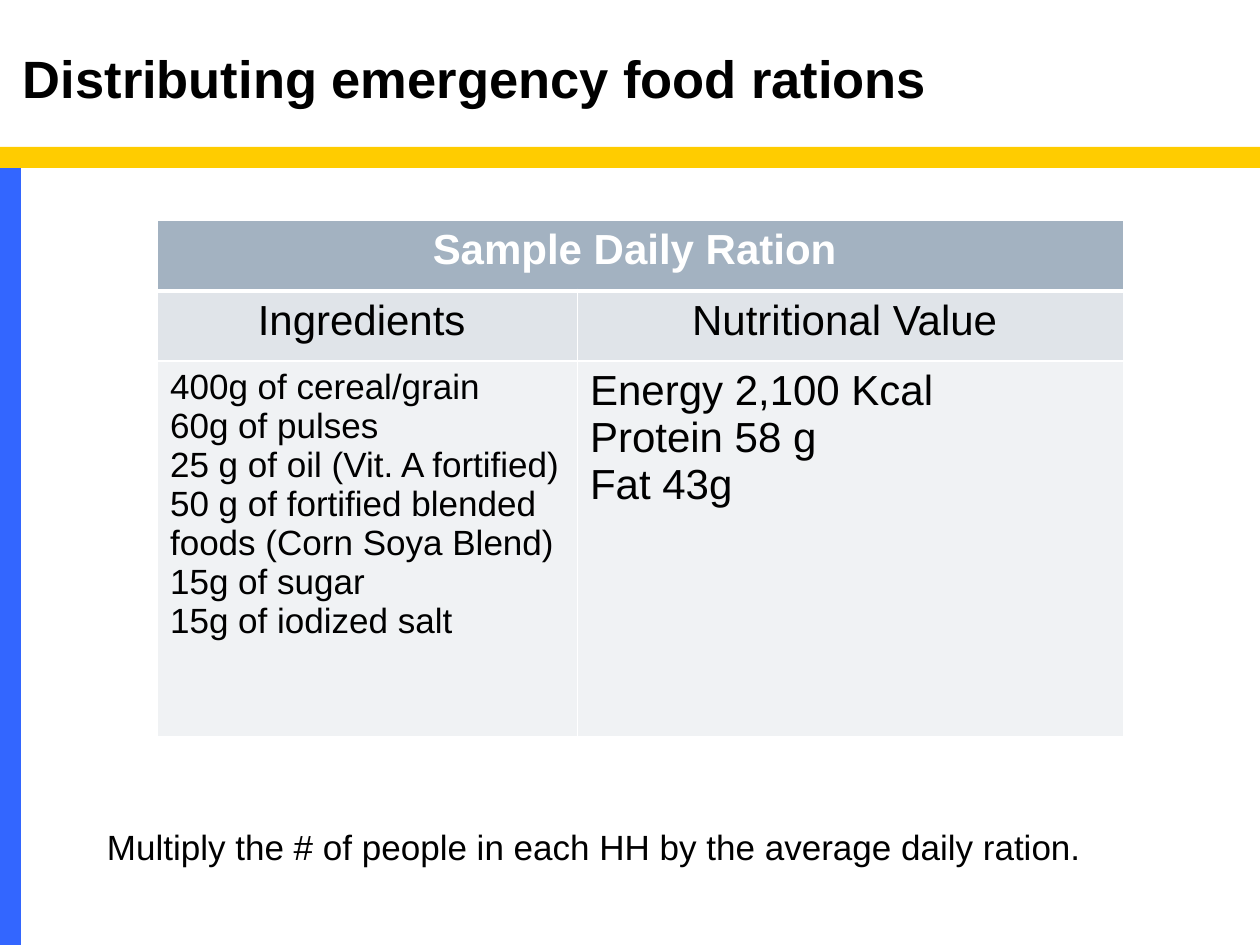
from lxml import etree
from pptx import Presentation
from pptx.dml.color import RGBColor
from pptx.enum.shapes import MSO_SHAPE
from pptx.enum.text import MSO_ANCHOR, PP_ALIGN
from pptx.oxml import parse_xml
from pptx.oxml.ns import nsdecls
from pptx.util import Pt

PX = 7620
BLACK = RGBColor(0x00, 0x00, 0x00)
WHITE = RGBColor(0xFF, 0xFF, 0xFF)
YELLOW = RGBColor(0xFF, 0xCC, 0x00)
BLUE = RGBColor(0x33, 0x66, 0xFF)
HEADER = RGBColor(0xA3, 0xB2, 0xC1)
SUBHEADER = RGBColor(0xE0, 0xE4, 0xE9)
BODY = RGBColor(0xF0, 0xF2, 0xF4)


def write(tf, text, size, color=BLACK, bold=False, align=PP_ALIGN.LEFT):
    p = tf.paragraphs[0]
    p.text = text
    p.alignment = align
    for r in p.runs:
        font = {"name": "Arial", "size": Pt(size), "bold": bold}
        for key, value in font.items():
            setattr(r.font, key, value)
        r.font.color.rgb = color


def border(cell, side, width):
    cell._tc.get_or_add_tcPr().append(parse_xml(
        f'<a:ln{side} {nsdecls("a")} w="{Pt(width)}"><a:solidFill>'
        f'<a:srgbClr val="{WHITE}"/></a:solidFill></a:ln{side}>'))


prs = Presentation()
prs.slide_width, prs.slide_height = 1200 * PX, 900 * PX
s = prs.slides.add_slide(prs.slide_layouts[6])

for box, color in [((0, 140, 1200, 20), YELLOW), ((0, 160, 20, 740), BLUE)]:
    sp = s.shapes.add_shape(MSO_SHAPE.RECTANGLE, *(v * PX for v in box))
    sp.shadow.inherit = False
    sp.fill.solid()
    sp.fill.fore_color.rgb = color
    sp.line.fill.background()

cols, rows = [400, 520], [67, 67, 358]
table = s.shapes.add_table(
    len(rows), len(cols), 150 * PX, 210 * PX, sum(cols) * PX, sum(rows) * PX).table
for col, width in zip(table.columns, cols):
    col.width = width * PX
for row, height in zip(table.rows, rows):
    row.height = height * PX

ingredients = "\n".join([
    "400g of cereal/grain",
    "60g of pulses",
    "25 g of oil (Vit. A fortified)",
    "50 g of fortified blended foods (Corn Soya Blend) ",
    "15g of sugar",
    "15g of iodized salt",
])
nutrition = "Energy 2,100 Kcal\nProtein 58 g \nFat 43g"
cells = [
    [("Sample Daily Ration ", 24), ("", 24)],
    [("Ingredients ", 24), ("Nutritional Value ", 24)],
    [(ingredients, 20), (nutrition, 24)],
]
styles = [
    (HEADER, WHITE, True, PP_ALIGN.CENTER),
    (SUBHEADER, BLACK, False, PP_ALIGN.CENTER),
    (BODY, BLACK, False, PP_ALIGN.LEFT),
]
table.cell(0, 0).merge(table.cell(0, 1))
for i, (texts, (fill, color, bold, align)) in enumerate(zip(cells, styles)):
    for j, (text, size) in enumerate(texts):
        cell = table.cell(i, j)
        for side in "LRTB":
            border(cell, side, 3 if (i, side) in [(0, "B"), (1, "T")] else 1)
        cell.fill.solid()
        cell.fill.fore_color.rgb = fill
        write(cell.text_frame, text, size, color, bold, align)

texts = [
    ((90, 780, 1000, 53), "Multiply the # of people in each HH by the average daily ration.",
     20, False, MSO_ANCHOR.TOP),
    ((10, 30, 1050, 80), "Distributing emergency food rations", 30, True, MSO_ANCHOR.BOTTOM),
]
for box, text, size, bold, anchor in texts:
    tf = s.shapes.add_textbox(*(v * PX for v in box)).text_frame
    tf.word_wrap = True
    tf.vertical_anchor = anchor
    write(tf, text, size, bold=bold)

prs.save("out.pptx")
